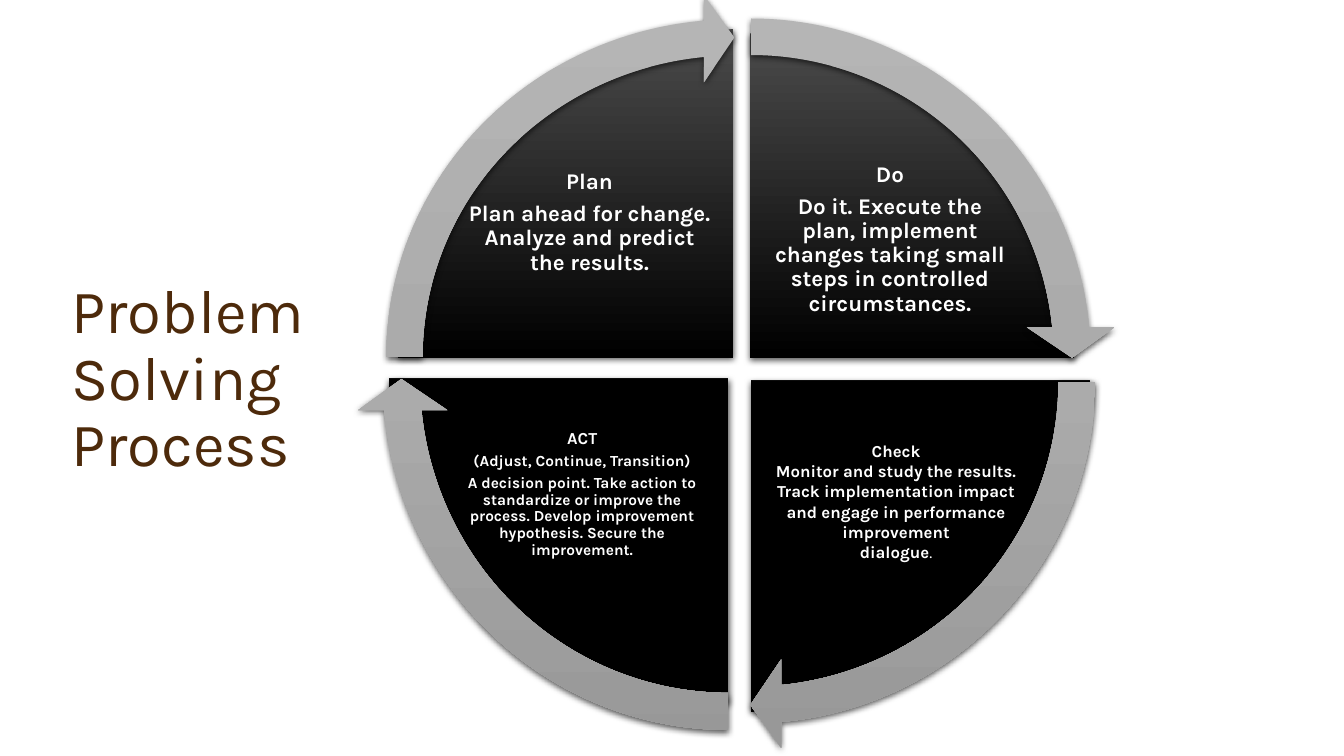
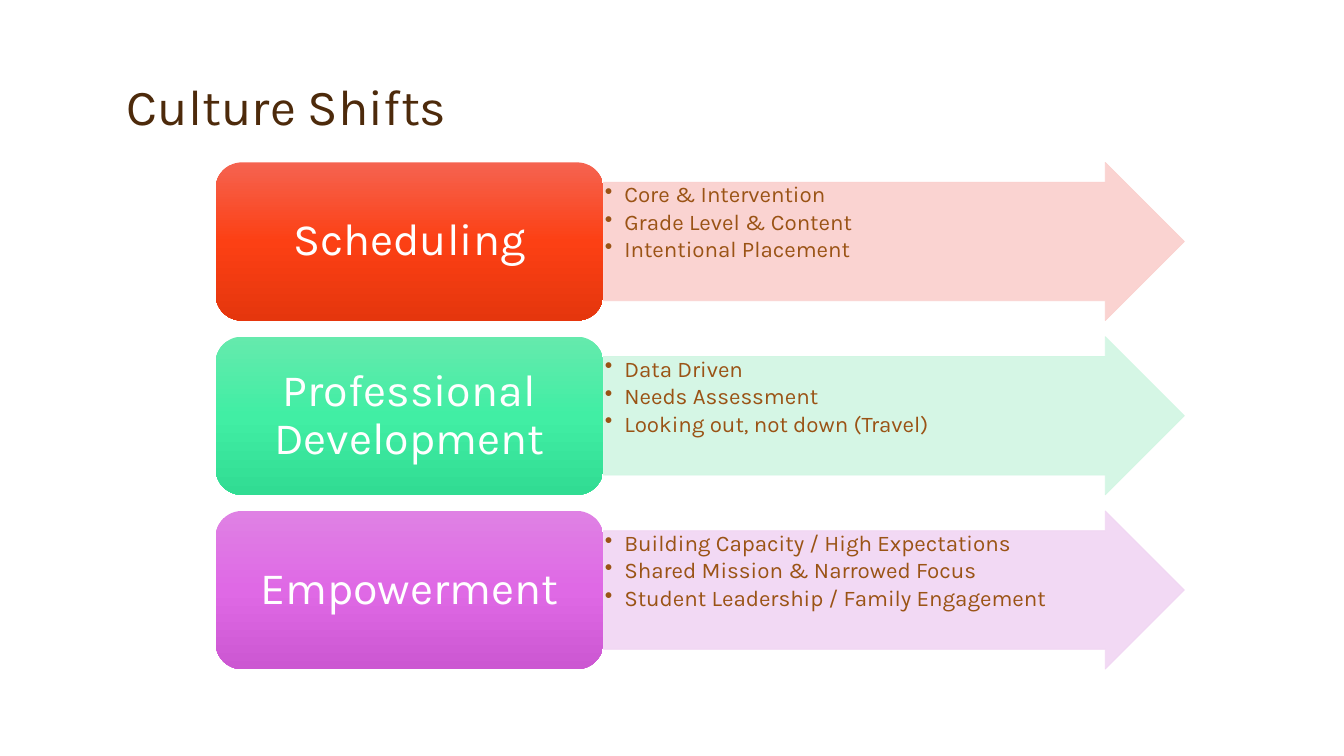
from collections import namedtuple
from copy import deepcopy
from dataclasses import dataclass

from lxml import etree
from pptx import Presentation
from pptx.dml.color import RGBColor
from pptx.enum import shapes, text
from pptx.oxml.ns import qn
from pptx.util import Pt

KIND = shapes.MSO_SHAPE
MID = text.MSO_ANCHOR.MIDDLE
LOW = text.MSO_ANCHOR.BOTTOM
LEFT = text.PP_ALIGN.LEFT
MIDST = text.PP_ALIGN.CENTER


@dataclass(frozen=True)
class Theme:
    font: str = "Karla"
    title: str = "4D2A0B"
    body: str = "9A5315"
    light: str = "FFFFFF"
    shade: str = "000000"
    dark: tuple = ("4B4B4B", "000000", "000000")
    gray: tuple = ("B5B5B5", "ABABAB", "989898")
    red: tuple = ("F56350", "FC4014", "E5360D")
    green: tuple = ("65EAAD", "41EEA4", "31DC93")
    pink: tuple = ("DF81E4", "DF69E5", "CC57D2")
    tall: int = 44
    head: int = 36
    label: int = 32
    large: int = 16
    mid: int = 12
    small: int = 11


def put(item, vals):
    for name, val in vals.items():
        setattr(item, name, val)


def add(node, tag, **vals):
    return etree.SubElement(node, qn(tag), {k: str(v) for k, v in vals.items()})


class Deck:
    """Holds the theme and the slide being drawn; lengths are in points."""

    def __init__(self, theme):
        self.look = theme
        self.prs = Presentation()
        put(self.prs, {"slide_width": Pt(960), "slide_height": Pt(540)})

    def page(self, title, box, size):
        self.slide = self.prs.slides.add_slide(self.prs.slide_layouts[5])
        shape = self.slide.shapes.title
        put(shape, dict(zip(("left", "top", "width", "height"), map(Pt, box))))
        self.frame(shape, (7.2, 3.6, 7.2, 3.6), LOW)
        self.say(shape, [(title, size)], self.look.title, align=LEFT)

    def frame(self, shape, pads, anchor):
        sides = ("margin_left", "margin_top", "margin_right", "margin_bottom")
        put(shape.text_frame, {
            **dict(zip(sides, map(Pt, pads))),
            "auto_size": text.MSO_AUTO_SIZE.NONE,
            "word_wrap": True, "vertical_anchor": anchor})

    def run(self, par, words, size, color, bold=False):
        run = par.add_run()
        run.text = words
        put(run.font, {"name": self.look.font, "size": Pt(size), "bold": bold})
        run.font.color.rgb = RGBColor.from_string(color)

    def say(self, shape, lines, color, align=MIDST, bold=False, gap=0.35,
            pitch=0.9, dots=False):
        """Fills the shape with (words, size) lines; gap is a share of the size."""
        body = shape.text_frame
        for i, (words, size) in enumerate(lines):
            par = body.add_paragraph() if i else body.paragraphs[0]
            put(par, {"alignment": align, "line_spacing": pitch,
                      "space_before": Pt(gap * size if i else 0)})
            if dots:
                props = par._p.get_or_add_pPr()
                props.set("marL", str(Pt(14)))
                props.set("indent", str(-Pt(14)))
                add(props, "a:buChar", char="•")
            self.run(par, words, size, color, bold)
        return par

    def shape(self, kind, box, adj=()):
        shape = self.slide.shapes.add_shape(kind, *map(Pt, box))
        for i, val in enumerate(adj):
            shape.adjustments[i] = val
        shape.shadow.inherit = False
        return shape

    def blend(self, kind, box, tones, adj=()):
        """Draws a shape with a three-tone fill running from top to bottom."""
        shape = self.shape(kind, box, adj)
        fill = shape.fill
        fill.gradient()
        fill.gradient_angle = 270
        stops = shape._element.spPr.find(".//" + qn("a:gsLst"))
        stops.append(deepcopy(stops[0]))
        for i, (stop, tone) in enumerate(zip(fill.gradient_stops, tones)):
            stop.color.rgb = RGBColor.from_string(tone)
            stop.position = i / 2
        shape.line.fill.background()
        return shape

    def cast(self, shape):
        """Adds a soft shadow just below the shape."""
        effects = shape._element.spPr.find(qn("a:effectLst"))
        drop = add(effects, "a:outerShdw", blurRad=Pt(4.5), dist=Pt(1.5),
                   dir=5400000, rotWithShape=0)
        add(add(drop, "a:srgbClr", val=self.look.shade), "a:alpha", val=63000)

    def note(self, box, lines, **style):
        shape = self.slide.shapes.add_textbox(*map(Pt, box))
        self.frame(shape, (1.4,) * 4, MID)
        return self.say(shape, lines, self.look.light, bold=True, **style)

    def slice(self, box, turn):
        pie = self.blend(KIND.PIE, box, self.look.dark, (turn, (turn + 54) % 216))
        self.cast(pie)

    def arc(self, box, turn):
        adj = (0.05, 3.28, turn + 50.72, turn, 0.06)
        self.cast(self.blend(KIND.CIRCULAR_ARROW, box, self.look.gray, adj))

    def card(self, box, words, tones):
        card = self.blend(KIND.ROUNDED_RECTANGLE, box, tones)
        self.frame(card, (10, 5, 10, 5), MID)
        self.say(card, [(words, self.look.label)], self.look.light)

    def arrow(self, box, items, color):
        arrow = self.shape(KIND.RIGHT_ARROW, box, (0.75, 0.5))
        for fill in (arrow.fill, arrow.line.fill):
            fill.solid()
            fill.fore_color.rgb = RGBColor.from_string(color)
        arrow.line.width = Pt(0.5)
        for tint in arrow._element.spPr.iter(qn("a:srgbClr")):
            add(tint, "a:alpha", val=90000)
        self.frame(arrow, (1, 1, 1, 1), text.MSO_ANCHOR.TOP)
        lines = [(item, self.look.large) for item in items]
        self.say(arrow, lines, self.look.body, align=LEFT, gap=0.15, dots=True)


Step = namedtuple("Step", "turn pie arc note lines style tail", defaults=({}, ""))


def cycle(deck):
    look = deck.look
    big, mid, small = look.large, look.mid, look.small
    deck.page("Problem Solving Process", (44, 181.5, 204.5, 165), look.tall)
    steps = [
        Step(162, (303.8, 23.8, 463.7, 463.7), (275.8, -5, 521.3, 521.3),
             (550, 111, 171.4, 120),
             [("Do", big),
              ("Do it. Execute the plan, implement changes taking small steps "
               "in controlled circumstances.", big)]),
        Step(0, (293.8, 36, 484.6, 472.3), (271.4, 10.8, 529.2, 524.2),
             (550.8, 298, 178.6, 120),
             [("Check", mid),
              ("Monitor and study the results. Track implementation impact "
               "and engage in performance improvement", mid),
              ("dialogue", mid)],
             {"gap": 0, "pitch": 1}, "."),
        Step(54, (277.9, 38.9, 485.3, 463.7), (254.9, 1.4, 530.6, 538.6),
             (326.2, 293, 179.3, 120),
             [("ACT", mid), ("(Adjust, Continue, Transition)", small),
              ("A decision point. Take action to standardize or improve the "
               "process. Develop improvement hypothesis. Secure the "
               "improvement.", small)]),
        Step(108, (284.4, 20.9, 478.8, 468.7), (257.8, -4.3, 533.5, 518.4),
             (332.6, 99, 177.1, 120),
             [("Plan", big),
              ("Plan ahead for change. Analyze and predict the results.", big)]),
    ]
    for step in steps:
        deck.slice(step.pie, step.turn)
        last = deck.note(step.note, step.lines, **step.style)
        if step.tail:
            deck.run(last, step.tail, mid, look.light)
    for step in steps:
        deck.arc(step.arc, step.turn)


def shifts(deck):
    look = deck.look
    deck.page("Culture Shifts", (83.5, 24, 792, 77), look.head)
    rows = [
        ("Scheduling", look.red, "FACFCD",
         ("Core & Intervention", "Grade Level & Content",
          "Intentional Placement")),
        ("Professional Development", look.green, "D1F6E3",
         ("Data Driven", "Needs Assessment", "Looking out, not down (Travel)")),
        ("Empowerment", look.pink, "F1D5F3",
         ("Building Capacity / High Expectations",
          "Shared Mission & Narrowed Focus",
          "Student Leadership / Family Engagement")),
    ]
    left, wide, high = 154, 277, 113
    for i, (name, tones, pale, items) in enumerate(rows):
        top = 116 + 124.5 * i
        deck.arrow((left + wide, top, 415, high), items, pale)
        deck.card((left, top, wide, high), name, tones)


def main():
    deck = Deck(Theme())
    cycle(deck)
    shifts(deck)
    deck.prs.save("out.pptx")


if __name__ == "__main__":
    main()
